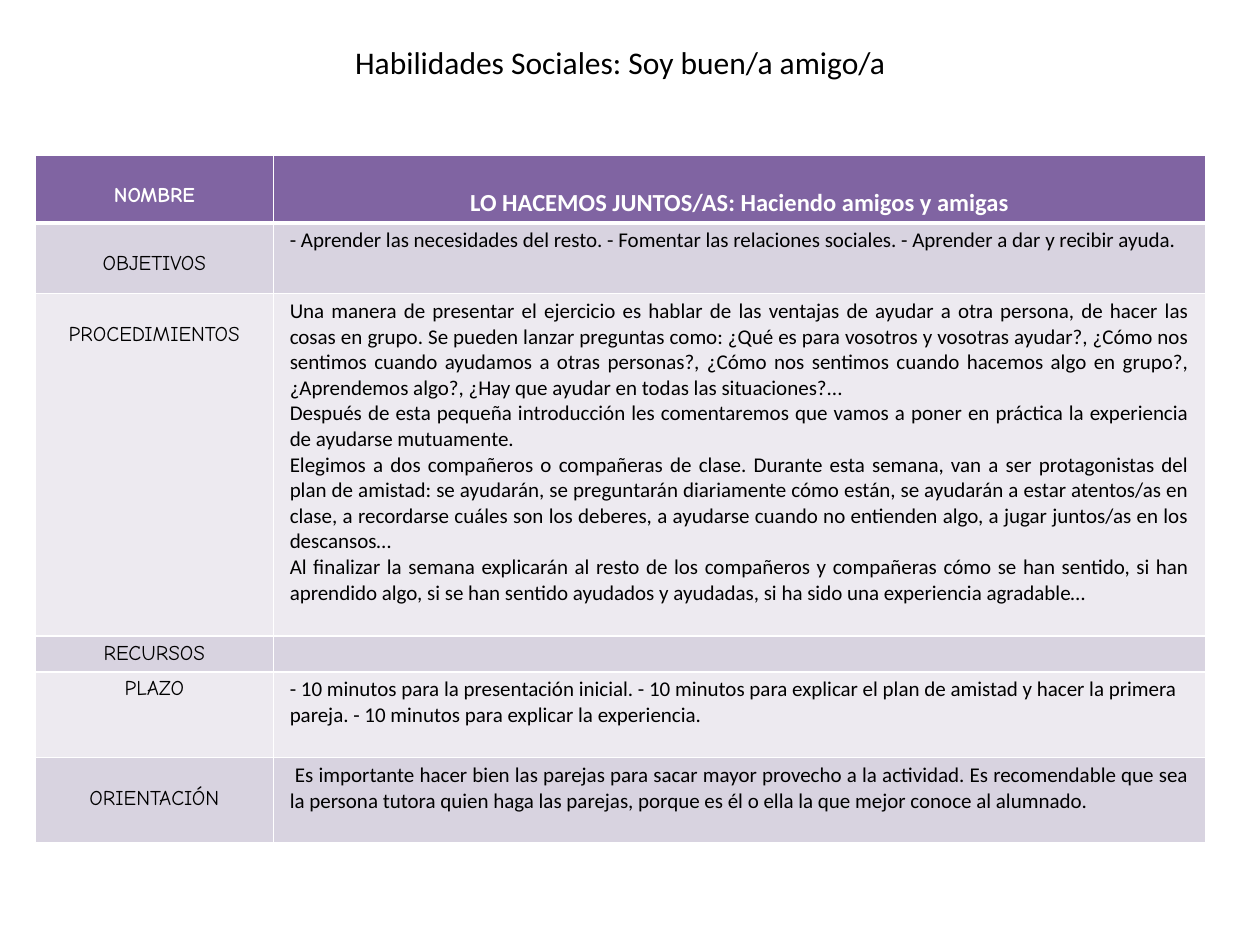
from pptx import Presentation
from pptx.dml.color import RGBColor
from pptx.enum.text import MSO_AUTO_SIZE, PP_ALIGN as Align
from pptx.oxml.ns import qn
from pptx.util import Inches, Pt
from lxml.etree import SubElement

BLACK = RGBColor(0x00, 0x00, 0x00)
WHITE = RGBColor(0xFF, 0xFF, 0xFF)
PURPLE = RGBColor(0x80, 0x64, 0xA2)
LILAC = RGBColor(0xD8, 0xD3, 0xE0)
PALE = RGBColor(0xED, 0xEA, 0xF0)

BODY_FONT = "Calibri"
LABEL_FONT = "Comic Neue"
INSET = 0.04
LOWERED = 0.23
HEADING_INSET = 0.26
COLUMN_WIDTHS = (1.89, 7.4)

TITLE = "Habilidades Sociales: Soy buen/a amigo/a"
ACTIVITY = "LO HACEMOS JUNTOS/AS: Haciendo amigos y amigas"
GOALS = (
    "- Aprender las necesidades del resto. - Fomentar las relaciones sociales. "
    "- Aprender a dar y recibir ayuda."
)
STEPS = "\n".join((
    "Una manera de presentar el ejercicio es hablar de las ventajas de ayudar a otra persona, "
    "de hacer las cosas en grupo. Se pueden lanzar preguntas como: ¿Qué es para vosotros y "
    "vosotras ayudar?, ¿Cómo nos sentimos cuando ayudamos a otras personas?, ¿Cómo nos sentimos "
    "cuando hacemos algo en grupo?, ¿Aprendemos algo?, ¿Hay que ayudar en todas las situaciones?...",
    "Después de esta pequeña introducción les comentaremos que vamos a poner en práctica la "
    "experiencia de ayudarse mutuamente.",
    "Elegimos a dos compañeros o compañeras de clase. Durante esta semana, van a ser protagonistas "
    "del plan de amistad: se ayudarán, se preguntarán diariamente cómo están, se ayudarán a estar "
    "atentos/as en clase, a recordarse cuáles son los deberes, a ayudarse cuando no entienden algo, "
    "a jugar juntos/as en los descansos…",
    "Al finalizar la semana explicarán al resto de los compañeros y compañeras cómo se han sentido, "
    "si han aprendido algo, si se han sentido ayudados y ayudadas, si ha sido una experiencia "
    "agradable…",
))
TIMING = (
    "- 10 minutos para la presentación inicial. - 10 minutos para explicar el plan de amistad "
    "y hacer la primera pareja. - 10 minutos para explicar la experiencia."
)
GUIDANCE = (
    " Es importante hacer bien las parejas para sacar mayor provecho a la actividad. Es recomendable "
    "que sea la persona tutora quien haga las parejas, porque es él o ella la que mejor conoce al "
    "alumnado."
)
ROWS = (
    ("NOMBRE", LOWERED, ACTIVITY, Align.CENTER, 0.54),
    ("OBJETIVOS", LOWERED, GOALS, Align.JUSTIFY, 0.56),
    ("PROCEDIMIENTOS", LOWERED, STEPS, Align.JUSTIFY, 2.72),
    ("RECURSOS", INSET, "", Align.LEFT, 0.28),
    ("PLAZO", INSET, TIMING, Align.LEFT, 0.68),
    ("ORIENTACIÓN", LOWERED, GUIDANCE, Align.JUSTIFY, 0.68),
)


def write_text(frame, text, font, size, color, align, bold=False):
    """Fill a text frame with uniformly formatted paragraphs."""
    frame.text = text
    for para in frame.paragraphs:
        para.alignment = align
        for span in para.runs:
            span.font.name = font
            span.font.size = Pt(size)
            span.font.bold = bold
            span.font.color.rgb = color
        if not para.runs:
            SubElement(para._p, qn("a:endParaRPr"), sz=str(size * 100))


def set_borders(cell, bottom_width):
    """Draw white cell borders ahead of the cell fill."""
    properties = cell._tc.get_or_add_tcPr()
    widths = (("lnL", 1), ("lnR", 1), ("lnT", 1), ("lnB", bottom_width))
    for position, (side, width) in enumerate(widths):
        line = SubElement(properties, qn(f"a:{side}"), w=str(Pt(width)))
        fill = SubElement(line, qn("a:solidFill"))
        SubElement(fill, qn("a:srgbClr"), val=str(WHITE))
        properties.insert(position, line)


def style_cell(cell, fill, top_inset, bottom_width):
    """Set the fill, insets and borders of a cell."""
    cell.fill.solid()
    cell.fill.fore_color.rgb = fill
    cell.margin_left = cell.margin_right = Inches(0.13)
    cell.margin_top = Inches(top_inset)
    cell.margin_bottom = Inches(INSET)
    set_borders(cell, bottom_width)


def add_title(page):
    """Add the slide title."""
    box = page.shapes.add_textbox(Inches(2.72), Inches(0.29), Inches(4.8), Inches(0.4))
    box.text_frame.word_wrap = True
    box.text_frame.auto_size = MSO_AUTO_SIZE.SHAPE_TO_FIT_TEXT
    write_text(box.text_frame, TITLE, BODY_FONT, 18, BLACK, Align.LEFT)


def add_activity_table(page):
    """Add the table that describes the activity."""
    height = sum(row[-1] for row in ROWS)
    table = page.shapes.add_table(
        len(ROWS), len(COLUMN_WIDTHS), Inches(0.28), Inches(1.23),
        Inches(sum(COLUMN_WIDTHS)), Inches(height),
    ).table
    for column, width in zip(table.columns, COLUMN_WIDTHS):
        column.width = Inches(width)
    for index, (label, label_inset, text, align, row_height) in enumerate(ROWS):
        header = index == 0
        fill = PURPLE if header else (PALE, LILAC)[index % 2]
        color = WHITE if header else BLACK
        bottom_width = 3 if header else 1
        table.rows[index].height = Inches(row_height)
        name, content = table.cell(index, 0), table.cell(index, 1)
        style_cell(name, fill, label_inset, bottom_width)
        style_cell(content, fill, HEADING_INSET if header else INSET, bottom_width)
        write_text(name.text_frame, label, LABEL_FONT, 12, color, Align.CENTER, header)
        write_text(content.text_frame, text, BODY_FONT, 14 if header else 12, color, align, header)


def main():
    """Build and save the deck."""
    deck = Presentation()
    deck.slide_width, deck.slide_height = Inches(10), Inches(7.5)
    page = deck.slides.add_slide(deck.slide_layouts[6])
    add_activity_table(page)
    add_title(page)
    deck.save("out.pptx")


if __name__ == "__main__":
    main()
